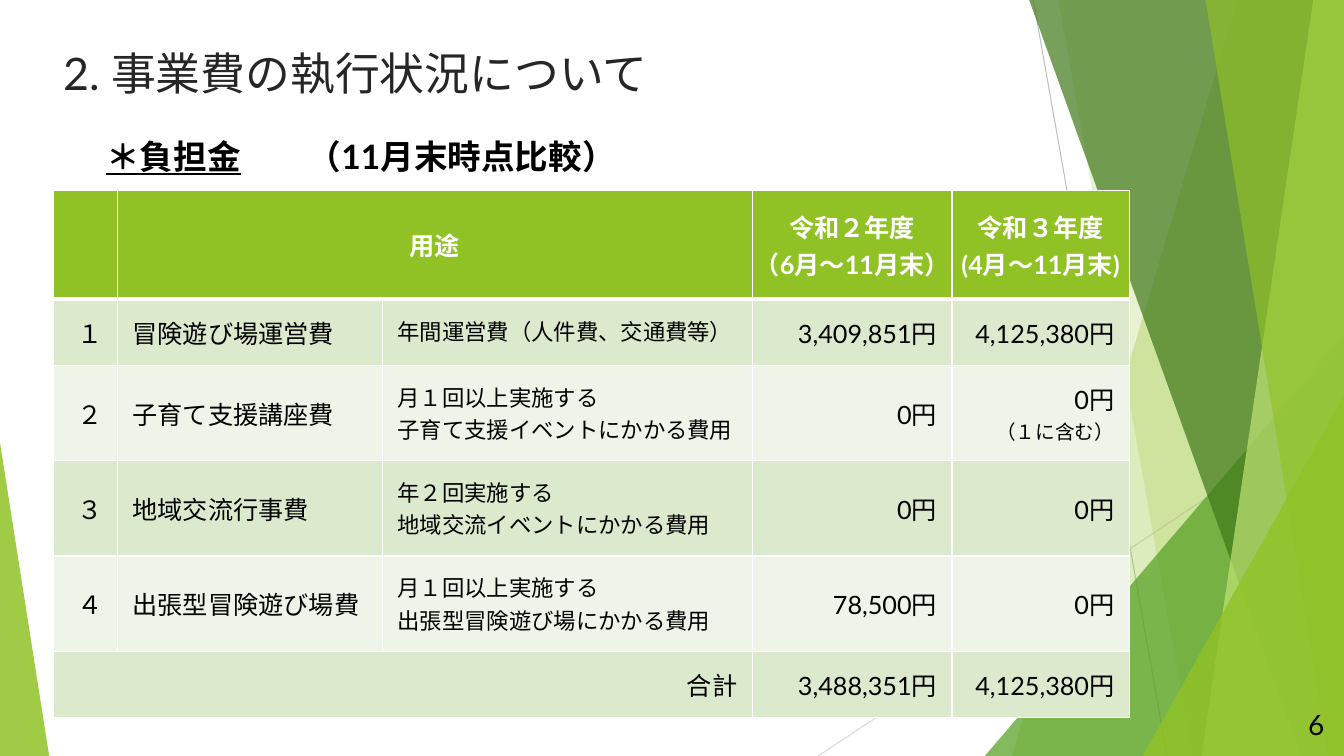
from lxml.etree import SubElement
from pptx import Presentation
from pptx.dml.color import RGBColor
from pptx.enum.shapes import MSO_CONNECTOR, MSO_SHAPE
from pptx.enum.text import MSO_ANCHOR, PP_ALIGN
from pptx.oxml.ns import qn
from pptx.util import Cm, Pt

WIDTH, HEIGHT = 33.87, 19.05
GREEN, BAND_DARK, BAND_LIGHT = "90C226", "DBE9CD", "EEF4E8"
CENTER, RIGHT, LEFT = PP_ALIGN.CENTER, PP_ALIGN.RIGHT, PP_ALIGN.LEFT
TOP, MIDDLE = MSO_ANCHOR.TOP, MSO_ANCHOR.MIDDLE


def color(value):
    return RGBColor.from_string(value)


class SlideBuilder:
    font = "Lato"
    ink = "000000"
    border = "FFFFFF"

    def __init__(self, slide):
        self.slide = slide

    def paint(self, shape, fill, opacity):
        shape.shadow.inherit = False
        shape.line.fill.background()
        shape.fill.solid()
        shape.fill.fore_color.rgb = color(fill)
        tint = shape.fill._xPr.find(qn("a:solidFill"))[0]
        SubElement(tint, qn("a:alpha"), val=str(opacity * 1000))

    def line(self, start, end, tone):
        connector = self.slide.shapes.add_connector(
            MSO_CONNECTOR.STRAIGHT, *(Cm(value) for value in start + end))
        connector.line.color.rgb = color(tone)
        connector.line.width = Pt(0.75)
        SubElement(connector._element.spPr, qn("a:effectLst"))

    def right_panel(self, top_x, bottom_x, fill, opacity):
        builder = self.slide.shapes.build_freeform(Cm(top_x), Cm(-0.02))
        corners = [(WIDTH, -0.02), (WIDTH, HEIGHT), (bottom_x, HEIGHT)]
        builder.add_line_segments([(Cm(x), Cm(y)) for x, y in corners])
        self.paint(builder.convert_to_shape(), fill, opacity)

    def corner_triangle(self, left, top, width, peak, fill, opacity):
        shape = self.slide.shapes.add_shape(
            MSO_SHAPE.ISOSCELES_TRIANGLE, Cm(left), Cm(top), Cm(width), Cm(HEIGHT - top))
        shape.adjustments[0] = peak
        self.paint(shape, fill, opacity)

    def run(self, paragraph, text, size, tone=ink, bold=False, underline=False):
        run = paragraph.add_run()
        run.text = text
        run.font.name = self.font
        run.font.size = Pt(size)
        run.font.color.rgb = color(tone)
        run.font.bold = bold
        run.font.underline = underline

    def text_box(self, left, top, width, height, anchor=TOP):
        frame = self.slide.shapes.add_textbox(
            Cm(left), Cm(top), Cm(width), Cm(height)).text_frame
        frame.word_wrap = True
        frame.vertical_anchor = anchor
        return frame.paragraphs[0]

    def cell(self, cell, lines, fill, align=LEFT, anchor=MIDDLE, inset=0.38,
             tone=ink, bold=False, widths=(1, 1, 1, 1)):
        properties = cell._tc.get_or_add_tcPr()
        for side, width in zip("LRTB", widths):
            edge = SubElement(properties, qn(f"a:ln{side}"), w=str(Pt(width)))
            solid = SubElement(edge, qn("a:solidFill"))
            SubElement(solid, qn("a:srgbClr"), val=self.border)
        cell.fill.solid()
        cell.fill.fore_color.rgb = color(fill)
        cell.vertical_anchor = anchor
        cell.margin_left = cell.margin_right = Cm(inset)
        cell.margin_top = cell.margin_bottom = Cm(inset)
        frame = cell.text_frame
        for index, (text, size) in enumerate(lines):
            paragraph = frame.add_paragraph() if index else frame.paragraphs[0]
            paragraph.alignment = align
            self.run(paragraph, text, size, tone, bold)

    def table(self, left, top, column_widths, row_heights):
        table = self.slide.shapes.add_table(
            len(row_heights), len(column_widths), Cm(left), Cm(top),
            Cm(sum(column_widths)), Cm(sum(row_heights))).table
        for column, width in zip(table.columns, column_widths):
            column.width = Cm(width)
        for row, row_height in zip(table.rows, row_heights):
            row.height = Cm(row_height)
        return table


def draw_background(builder):
    builder.line((26.04, 0), (29.41, HEIGHT), "BFBFBF")
    builder.line((WIDTH, 10.24), (20.62, HEIGHT), "D9D9D9")
    builder.right_panel(31.19, 25.5, GREEN, 30)
    builder.right_panel(26.67, 30.05, GREEN, 20)
    builder.corner_triangle(24.82, 8.46, 9.05, 1, "54A021", 72)
    builder.right_panel(25.93, 32.79, "3F7819", 70)
    builder.right_panel(33.1, 30.28, "C0E474", 70)
    builder.right_panel(30.38, 33.48, GREEN, 65)
    builder.corner_triangle(28.8, 9.98, 5.07, 1, GREEN, 80)
    builder.corner_triangle(0, 11.15, 1.24, 0, GREEN, 85)


def draw_headings(builder):
    title = builder.text_box(1.34, 0.48, 29.21, 2.69, MIDDLE)
    builder.run(title, "2. 事業費の執行状況について", 32, "262626")

    subtitle = builder.text_box(2.43, 3.07, 25.88, 1.73)
    subtitle.line_spacing = Pt(35)
    subtitle.space_before = Pt(10)
    tabs = SubElement(subtitle._p.get_or_add_pPr(), qn("a:tabLst"))
    SubElement(tabs, qn("a:tab"), pos=str(Cm(5.08)), algn="l")
    builder.run(subtitle, "＊負担金", 24, bold=True, underline=True)
    builder.run(subtitle, "\t（11月末時点比較）", 24, bold=True)


def draw_expenses(builder):
    table = builder.table(1.35, 4.8, [1.61, 6.68, 9.32, 5.03, 4.47],
                          [2.74, 1.67, 2.4, 2.4, 2.4, 1.67])
    table.cell(0, 1).merge(table.cell(0, 2))
    table.cell(5, 0).merge(table.cell(5, 2))

    headers = [[], ["用途"], [], ["令和２年度", "（6月～11月末）"],
               ["令和３年度", "(4月～11月末)"]]
    for column, texts in enumerate(headers):
        builder.cell(table.cell(0, column), [(text, 18) for text in texts], GREEN,
                     CENTER, inset=0, tone="FFFFFF", bold=True, widths=(1, 1, 1, 3))

    expenses = [
        ("１", "冒険遊び場運営費", ["年間運営費（人件費、交通費等）"],
         "3,409,851円", "4,125,380円"),
        ("２", "子育て支援講座費", ["月１回以上実施する", "子育て支援イベントにかかる費用"],
         "0円", "0円"),
        ("３", "地域交流行事費", ["年２回実施する", "地域交流イベントにかかる費用"],
         "0円", "0円"),
        ("４", "出張型冒険遊び場費", ["月１回以上実施する", "出張型冒険遊び場にかかる費用"],
         "78,500円", "0円"),
        ("合計", "", [], "3,488,351円", "4,125,380円"),
    ]
    included_note = {(2, 4): [("（１に含む）", 14)]}
    aligns = [RIGHT, LEFT, LEFT, RIGHT, RIGHT]
    for row, expense in enumerate(expenses, 1):
        fill = BAND_DARK if row % 2 else BAND_LIGHT
        widths = (1, 1, 3 if row == 1 else 1, 1)
        for column, content in enumerate(expense):
            if column == 2:
                lines = [(text, 16) for text in content]
            else:
                lines = [(content, 18)] if content else []
            lines += included_note.get((row, column), [])
            builder.cell(table.cell(row, column), lines, fill, aligns[column],
                         TOP if column == 2 else MIDDLE, widths=widths)


def main():
    presentation = Presentation()
    presentation.slide_width = Cm(WIDTH)
    presentation.slide_height = Cm(HEIGHT)
    builder = SlideBuilder(presentation.slides.add_slide(presentation.slide_layouts[6]))
    draw_background(builder)
    draw_headings(builder)
    draw_expenses(builder)
    builder.run(builder.text_box(32.72, 17.7, 1.15, 1.12), "6", 20)
    presentation.save("out.pptx")


if __name__ == "__main__":
    main()
